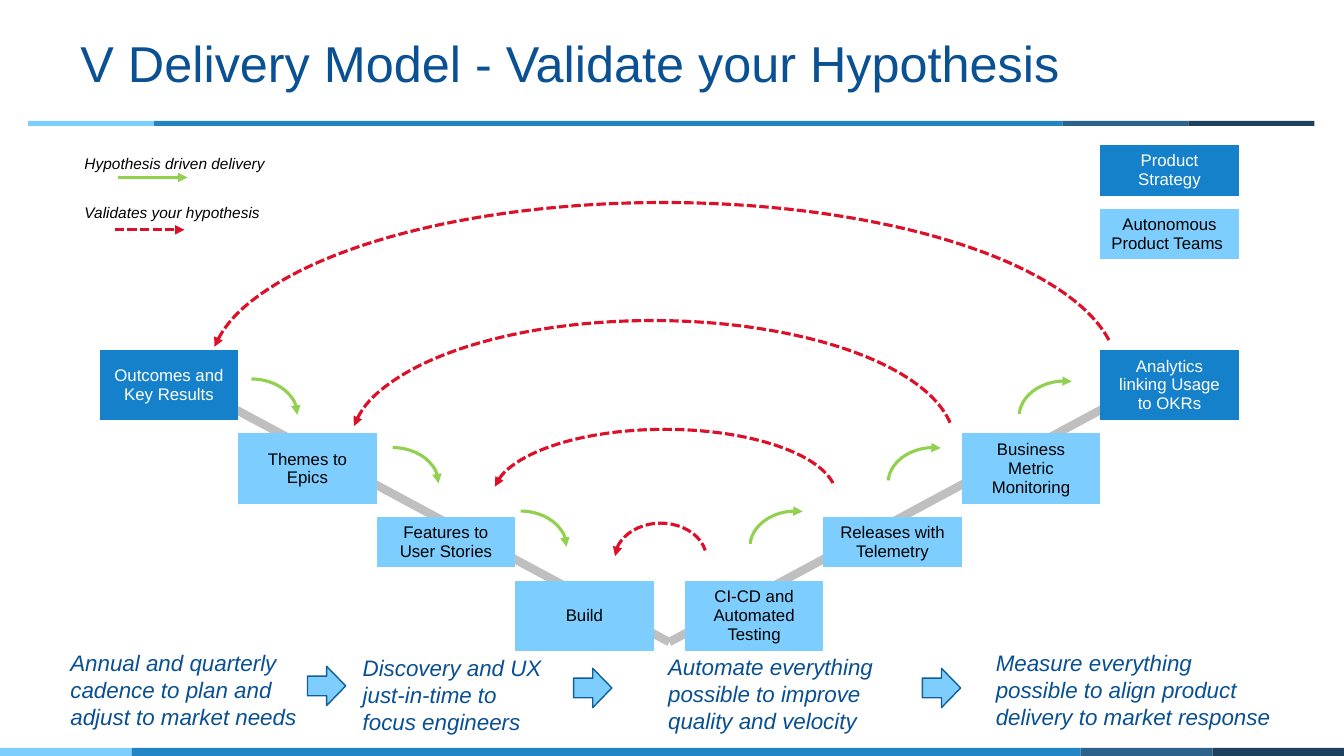
from dataclasses import dataclass
from itertools import product

from lxml.etree import SubElement
from pptx import Presentation
from pptx.dml.color import RGBColor
from pptx.enum.dml import MSO_LINE
from pptx.enum.shapes import MSO_CONNECTOR, MSO_SHAPE
from pptx.enum.text import MSO_ANCHOR, MSO_AUTO_SIZE, PP_ALIGN
from pptx.oxml.ns import qn
from pptx.util import Inches, Pt


@dataclass(frozen=True)
class Theme:
    font: str = "Arial"
    title: str = "0A5193"
    caption: str = "095093"
    strategy: str = "1581CA"
    team: str = "7DCEFE"
    on_strategy: str = "FFFFFF"
    ink: str = "000000"
    leg: str = "BFBFBF"
    delivery: str = "92D050"
    validation: str = "DC1029"
    arrow_edge: str = "105F95"
    strip: tuple = ("7ECEFD", "2185C5", "2C618B", "1D405D")
    title_size: float = 36
    caption_size: float = 16
    stage_size: float = 12
    legend_size: float = 11
    gap_size: float = 1
    flow_width: float = 2.25


THEME = Theme()
SLIDE_COLUMNS, SLIDE_ROWS = 133.33, 75
STRIP_SHARES = (0.098, 0.706, 0.098, 0.098)
NO_GRID_STYLE = "{2D5ABB26-0587-4C30-8999-92F81FD0307C}"

STAGE_COLUMN, CENTRE_COLUMN = 13.74, 3.1
BOX_ROW, TALL_ROW, GAP_ROW, LEGEND_GAP_ROW = 5, 7, 1.3, 9
STAGE_COLUMNS = [STAGE_COLUMN] * 4 + [CENTRE_COLUMN] + [STAGE_COLUMN] * 4
STAGE_ROWS = [BOX_ROW, GAP_ROW, BOX_ROW, LEGEND_GAP_ROW, TALL_ROW, GAP_ROW,
              TALL_ROW, GAP_ROW, BOX_ROW, GAP_ROW, TALL_ROW]
STAGES = {
    (0, 8): ("Product Strategy", True),
    (2, 8): ("Autonomous Product Teams ", False),
    (4, 0): ("Outcomes and Key Results", True),
    (4, 8): ("Analytics linking Usage to OKRs", True),
    (6, 1): ("Themes to Epics", False),
    (6, 7): ("Business Metric Monitoring", False),
    (8, 2): ("Features to User Stories", False),
    (8, 6): ("Releases with Telemetry", False),
    (10, 3): ("Build", False),
    (10, 5): ("CI-CD and Automated Testing", False),
}
VALIDATION_LOOPS = [
    (61, 51.9, 9.1, 7.1, 349.19),
    (48.9, 42.6, 34.1, 13.4, 355.95),
    (34.8, 31.8, 59.9, 24.5, 355.95),
    (20.7, 20.1, 90.2, 34, 355.95),
]
STEPS_DOWN = [(20.4, 37.6), (34.4, 44.4), (47.1, 50.7)]
STEPS_UP = [(74.4, 50.7), (88.1, 44.4), (101.1, 37.8)]
LEGEND = [
    ("Hypothesis driven delivery", 14.8, 20, 11.7, 17.6, THEME.delivery, False),
    ("Validates your hypothesis", 19.7, 19.6, 11.4, 22.8, THEME.validation, True),
]
CAPTIONS = [
    ("Annual and quarterly cadence to plan and adjust to market needs", 6, 63.9, 25.4),
    ("Discovery and UX just-in-time to focus engineers", 35, 64.4, 20.3),
    ("Automate everything possible to improve quality and velocity", 65.3, 64.3, 22.6),
    ("Measure everything possible to align product delivery to market response",
     97.8, 63.9, 29.5),
]
PHASE_ARROWS = [(30.5, 66.1), (56.9, 66.3), (91.5, 66.3)]


def grid(*cells):
    return [Inches(cell / 10) for cell in cells]


def colour(code):
    return RGBColor.from_string(code)


def write(frame, text, *, size, color, italic=False, align=PP_ALIGN.LEFT,
          anchor=MSO_ANCHOR.TOP, spacing=None, wrap=True, fit=MSO_AUTO_SIZE.NONE):
    frame.word_wrap = wrap
    frame.auto_size = fit
    frame.vertical_anchor = anchor
    paragraph = frame.paragraphs[0]
    paragraph.alignment = align
    paragraph.line_spacing = spacing
    run = paragraph.add_run()
    run.text = text
    run.font.name = THEME.font
    run.font.size = Pt(size)
    run.font.italic = italic
    run.font.color.rgb = colour(color)


def add_label(slide, text, box, **style):
    write(slide.shapes.add_textbox(*grid(*box)).text_frame, text, **style)


def add_block(slide, kind, box, fill, edge=None):
    block = slide.shapes.add_shape(kind, *grid(*box))
    block.shadow.inherit = False
    block.fill.solid()
    block.fill.fore_color.rgb = colour(fill)
    if edge:
        block.line.color.rgb = colour(edge)
        block.line.width = Pt(1)
    else:
        block.line.fill.background()


def draw_line(line, color, width, dashed=False, arrow=None):
    line.color.rgb = colour(color)
    line.width = Pt(width)
    if dashed:
        line.dash_style = MSO_LINE.SQUARE_DOT
    if arrow:
        SubElement(line._get_or_add_ln(), qn(f"a:{arrow}"), type="triangle")


def add_line(slide, start, end, color, width, **style):
    line = slide.shapes.add_connector(MSO_CONNECTOR.STRAIGHT, *grid(*start, *end))
    draw_line(line.line, color, width, **style)
    SubElement(line._element.spPr, qn("a:effectLst"))


def add_curve(slide, box, angles, color, **style):
    curve = slide.shapes.add_shape(MSO_SHAPE.ARC, *grid(*box))
    curve.shadow.inherit = False
    curve.fill.background()
    for index, degrees in enumerate(angles):
        curve.adjustments[index] = degrees * 0.6
    draw_line(curve.line, color, THEME.flow_width, **style)


def add_strip(slide, left, top, width, height):
    for share, shade in zip(STRIP_SHARES, THEME.strip):
        add_block(slide, MSO_SHAPE.RECTANGLE, (left, top, width * share, height), shade)
        left += width * share


def add_stages(slide):
    extent = grid(9.9, 14.4, sum(STAGE_COLUMNS), sum(STAGE_ROWS))
    table = slide.shapes.add_table(len(STAGE_ROWS), len(STAGE_COLUMNS), *extent).table
    table.first_row = table.horz_banding = False
    table._tbl.tblPr.find(qn("a:tableStyleId")).text = NO_GRID_STYLE
    for column, width in zip(table.columns, grid(*STAGE_COLUMNS)):
        column.width = width
    for row, height in zip(table.rows, grid(*STAGE_ROWS)):
        row.height = height
    for place in product(range(len(STAGE_ROWS)), range(len(STAGE_COLUMNS))):
        cell = table.cell(*place)
        if place in STAGES:
            text, strategic = STAGES[place]
            cell.fill.solid()
            cell.fill.fore_color.rgb = colour(THEME.strategy if strategic else THEME.team)
            cell.vertical_anchor = MSO_ANCHOR.MIDDLE
            write(cell.text_frame, text, size=THEME.stage_size, align=PP_ALIGN.CENTER,
                  color=THEME.on_strategy if strategic else THEME.ink, anchor=None,
                  wrap=None, fit=None)
        else:
            cell.fill.background()
            cell.margin_top = cell.margin_bottom = 0
            ending = cell.text_frame.paragraphs[0]._p.get_or_add_endParaRPr()
            ending.set("sz", str(Pt(THEME.gap_size).centipoints))


def main():
    presentation = Presentation()
    presentation.slide_width, presentation.slide_height = grid(SLIDE_COLUMNS, SLIDE_ROWS)
    slide = presentation.slides.add_slide(presentation.slide_layouts[6])

    add_strip(slide, 2.8, 12, 127.6, 0.5)
    add_strip(slide, 0, 74.2, SLIDE_COLUMNS, 0.9)
    for top_end in ((14, 35.6), (118.8, 35.5)):
        add_line(slide, top_end, (66.4, 63.7), THEME.leg, 6)
    add_stages(slide)
    add_label(slide, "V Delivery Model - Validate your Hypothesis", (7, 0.5, 103.4, 12.2),
              size=THEME.title_size, color=THEME.title, anchor=MSO_ANCHOR.MIDDLE, spacing=0.9)

    for *box, end_angle in VALIDATION_LOOPS:
        add_curve(slide, box, (183.44, end_angle), THEME.validation,
                  dashed=True, arrow="headEnd")
    for steps, angles in ((STEPS_DOWN, (270, 0)), (STEPS_UP, (183.68, 281.01))):
        for corner in steps:
            add_curve(slide, (*corner, 9.1, 7.1), angles, THEME.delivery, arrow="tailEnd")

    for text, top, width, line_left, line_top, color, dashed in LEGEND:
        add_line(slide, (line_left, line_top), (line_left + 6.9, line_top), color,
                 THEME.flow_width, dashed=dashed, arrow="tailEnd")
        add_label(slide, text, (7.4, top, width, 2.9), size=THEME.legend_size,
                  color=THEME.ink, italic=True, wrap=False, fit=MSO_AUTO_SIZE.SHAPE_TO_FIT_TEXT)
    for text, left, top, width in CAPTIONS:
        add_label(slide, text, (left, top, width, 9.1), size=THEME.caption_size,
                  color=THEME.caption, italic=True, fit=MSO_AUTO_SIZE.SHAPE_TO_FIT_TEXT)
    for corner in PHASE_ARROWS:
        add_block(slide, MSO_SHAPE.RIGHT_ARROW, (*corner, 3.8, 3.9), THEME.team, THEME.arrow_edge)

    presentation.save("out.pptx")


if __name__ == "__main__":
    main()
